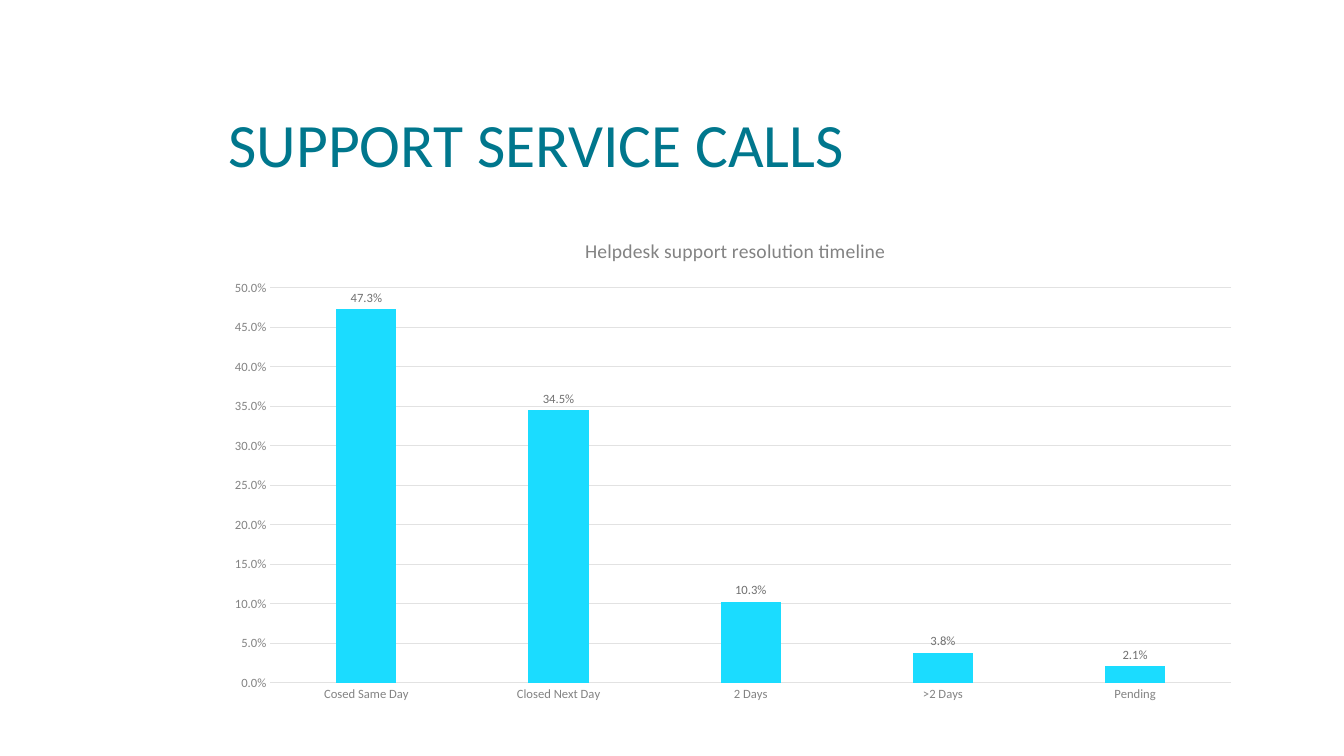
import pptx
import pptx.util
import pptx.chart.data
import pptx.dml.color
import pptx.enum.chart
import pptx.enum.text
import pptx.oxml
import pptx.oxml.ns

Cm, Pt = pptx.util.Cm, pptx.util.Pt

# Content
TITLE = "SUPPORT SERVICE CALLS"
CHART_TITLE = "Helpdesk support resolution timeline"
SERIES = "Series 1"
CALLS = {
    "Cosed Same Day": 0.473,
    "Closed Next Day": 0.345,
    "2 Days": 0.103,
    ">2 Days": 0.038,
    "Pending": 0.021,
}
PERCENT = "0.0%"

# Formats
FONT = "Calibri"
TEAL, CYAN, GRID = "00778D", "1BDCFF", "E2E2E2"
TITLE_FORMAT = {"name": FONT, "size": Pt(44)}
CHART_FORMAT = {"name": FONT, "size": Pt(10)}
HEADING_FORMAT = {"name": FONT, "size": Pt(14), "bold": False}
SMALL_FORMAT = {"name": FONT, "size": Pt(9)}

# Layout
LEFT, WIDTH = Cm(5.51), Cm(26.04)
TITLE_TOP, TITLE_HEIGHT = Cm(1.07), Cm(3.6)
CHART_TOP, CHART_HEIGHT = Cm(5.51), Cm(12.45)
PLOT = {"x": 0.05, "y": 0.14, "w": 0.93, "h": 0.8}


def rgb(value):
    return pptx.dml.color.RGBColor.from_string(value)


def style(font, formats, color):
    for name, value in formats.items():
        setattr(font, name, value)
    font.color.rgb = rgb(color)


def thin_line(line):
    line.color.rgb = rgb(GRID)
    line.width = Pt(0.75)


prs = pptx.Presentation()
prs.slide_width, prs.slide_height = Cm(33.87), Cm(19.05)
s = prs.slides.add_slide(prs.slide_layouts[6])

# Slide title
tf = s.shapes.add_textbox(LEFT, TITLE_TOP, WIDTH, TITLE_HEIGHT).text_frame
tf.word_wrap = True
tf.vertical_anchor = pptx.enum.text.MSO_ANCHOR.BOTTOM
p = tf.paragraphs[0]
p.line_spacing = 0.85
r = p.add_run()
r.text = TITLE
style(r.font, TITLE_FORMAT, TEAL)

# Chart
data = pptx.chart.data.CategoryChartData(number_format=PERCENT)
data.categories = list(CALLS)
data.add_series(SERIES, list(CALLS.values()))
chart = s.shapes.add_chart(
    pptx.enum.chart.XL_CHART_TYPE.COLUMN_CLUSTERED,
    LEFT, CHART_TOP, WIDTH, CHART_HEIGHT, data).chart
chart.has_legend = False
style(chart.font, CHART_FORMAT, "404040")

# Chart title
chart.has_title = True
chart.chart_title.include_in_layout = False
p = chart.chart_title.text_frame.paragraphs[0]
r = p.add_run()
r.text = CHART_TITLE
style(r.font, HEADING_FORMAT, "838383")

# Axes
for axis in (chart.category_axis, chart.value_axis):
    axis.major_tick_mark = pptx.enum.chart.XL_TICK_MARK.NONE
    axis.minor_tick_mark = pptx.enum.chart.XL_TICK_MARK.NONE
    style(axis.tick_labels.font, SMALL_FORMAT, "838383")
thin_line(chart.category_axis.format.line)

values = chart.value_axis
values.minimum_scale, values.maximum_scale, values.major_unit = 0, 0.5, 0.05
values.format.line.fill.background()
values.has_major_gridlines = True
thin_line(values.major_gridlines.format.line)
values.tick_labels.number_format = PERCENT
values.tick_labels.number_format_is_linked = False

# Columns and their labels
plot = chart.plots[0]
plot.gap_width, plot.overlap = 219, -27
plot.vary_by_categories = False
series = plot.series[0]
series.format.fill.solid()
series.format.fill.fore_color.rgb = rgb(CYAN)
labels = series.data_labels
labels.show_value = True
labels.position = pptx.enum.chart.XL_LABEL_POSITION.OUTSIDE_END
labels.number_format = PERCENT
labels.number_format_is_linked = False
style(labels.font, SMALL_FORMAT, "707070")

# Fixed plot area
area = chart.element.find(".//" + pptx.oxml.ns.qn("c:plotArea"))
for old in area.findall(pptx.oxml.ns.qn("c:layout")):
    area.remove(old)
parts = "".join(f'<c:{key} val="{value}"/>' for key, value in PLOT.items())
area.insert(0, pptx.oxml.parse_xml(
    f'<c:layout {pptx.oxml.ns.nsdecls("c")}><c:manualLayout>'
    '<c:layoutTarget val="inner"/><c:xMode val="edge"/><c:yMode val="edge"/>'
    f'{parts}</c:manualLayout></c:layout>'))

prs.save("out.pptx")
